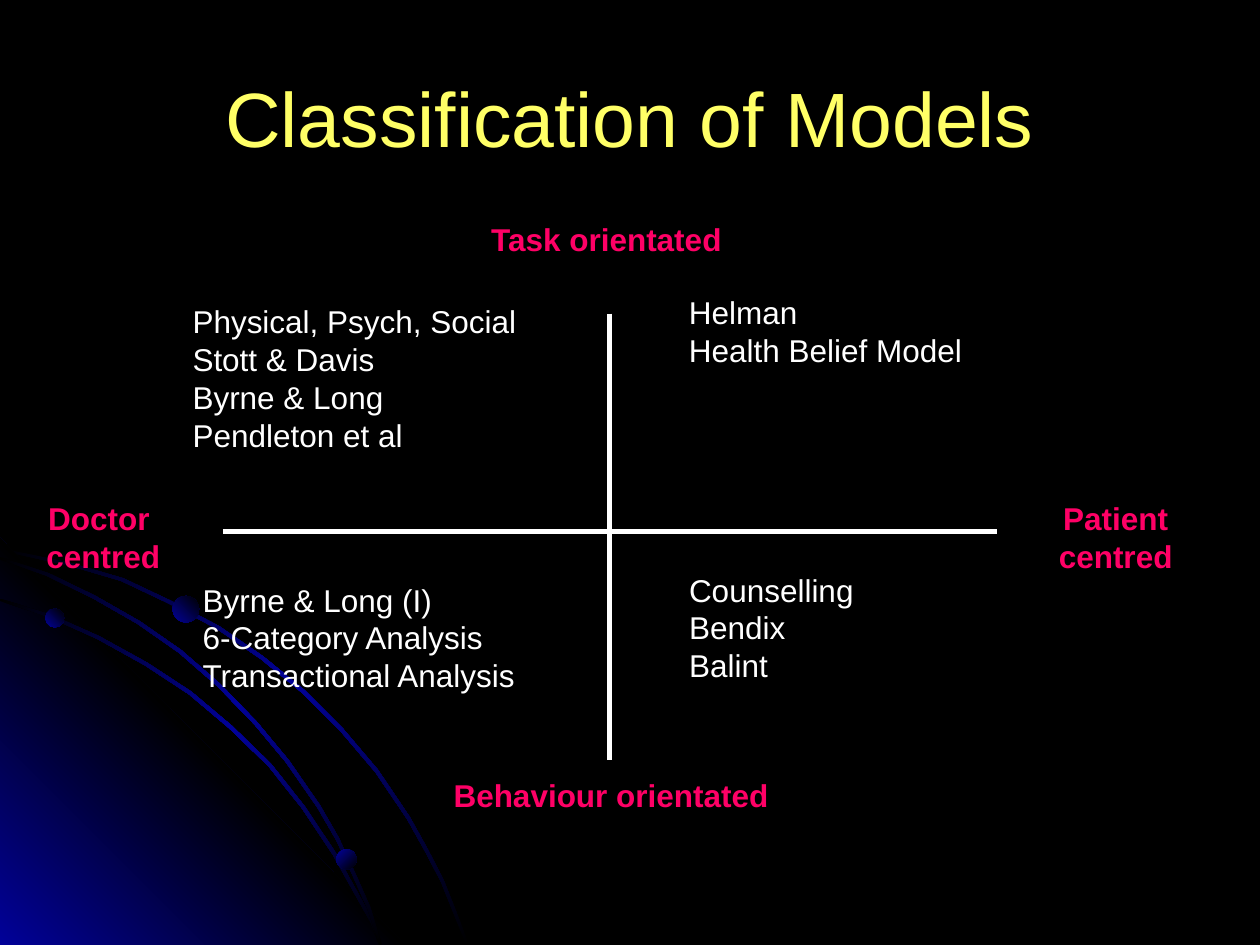
from copy import deepcopy
from pptx import Presentation
from pptx.util import Inches, Pt
from pptx.dml.color import RGBColor as RGB
from pptx.enum.shapes import MSO_SHAPE as SHAPE, MSO_CONNECTOR as LINK
from pptx.enum.text import PP_ALIGN as ALIGN, MSO_ANCHOR as ANCHOR
from pptx.oxml.ns import qn
from pptx.oxml.xmlchemy import OxmlElement as Element

COLORS = {"black": "000000", "blue": "010199", "title": "FFFF66",
          "pink": "FF0066", "white": "FFFFFF"}
WIDTH, HEIGHT = 10, 7.5

deck = Presentation()
deck.slide_width, deck.slide_height = Inches(WIDTH), Inches(HEIGHT)
slide = deck.slides.add_slide(deck.slide_layouts[6])
back = slide.background.fill
back.solid()
back.fore_color.rgb = RGB.from_string(COLORS["black"])
shapes = slide.shapes


def shade(shape, names, angle):
    """Fill with evenly spaced gradient stops, angle counter-clockwise."""
    shape.shadow.inherit = False
    shape.line.fill.background()
    fill = shape.fill
    fill.gradient()
    fill.gradient_angle = angle
    stops = shape.element.spPr.find(".//" + qn("a:gsLst"))
    while len(stops) < len(names):
        stops.append(deepcopy(stops[0]))
    for i, (stop, name) in enumerate(zip(fill.gradient_stops, names)):
        stop.position = i / (len(names) - 1)
        stop.color.rgb = RGB.from_string(COLORS[name])


def write(box, lines, color, size=18, bold=False, align=ALIGN.LEFT, wrap=False):
    """Add a text box with one paragraph per line."""
    frame = shapes.add_textbox(*map(Inches, box)).text_frame
    frame.word_wrap = wrap
    frame.text = "\n".join(lines)
    for para in frame.paragraphs:
        para.alignment = align
        font = para.font
        font.name, font.size, font.bold = "Arial", Pt(size), bold
        font.color.rgb = RGB.from_string(COLORS[color])
    return frame


# Corner decoration: glowing wedge and three thin arcs, given by outer edge
wedge = [(0, 4.27), (3.22, 7.5), (0, 7.5)]
arcs = [
    [(0, 4.35), (0.57, 4.47), (0.98, 4.59), (1.36, 4.77), (1.74, 4.97),
     (2.09, 5.21), (2.42, 5.48), (2.72, 5.78), (3, 6.11), (3.25, 6.48),
     (3.39, 6.73), (3.52, 6.98), (3.62, 7.23), (3.72, 7.49)],
    [(0, 4.75), (0.41, 4.88), (0.79, 5.05), (1.17, 5.26), (1.52, 5.49),
     (1.84, 5.76), (2.15, 6.06), (2.42, 6.4), (2.66, 6.76), (2.86, 7.12),
     (2.96, 7.3), (3.03, 7.49)],
    [(0, 4.42), (0.39, 4.55), (0.76, 4.73), (1.11, 4.93), (1.44, 5.16),
     (1.75, 5.43), (2.04, 5.73), (2.29, 6.03), (2.54, 6.39), (2.69, 6.65),
     (2.82, 6.93), (2.94, 7.2), (3.03, 7.49)],
]
glow = ("black", "blue", "black")
forms = [(wedge, ("blue", "black", "blue"), 45)]
for arc in arcs:
    inner = [(max(x - 0.02, 0), min(y + 0.02, HEIGHT)) for x, y in arc]
    forms.append((arc + inner[::-1], glow, 315))
forms[0], forms[1] = forms[1], forms[0]  # the first arc lies behind the wedge
for points, names, angle in forms:
    spots = [(Inches(x), Inches(y)) for x, y in points]
    pen = shapes.build_freeform(*spots[0])
    pen.add_line_segments(spots[1:], close=True)
    shade(pen.convert_to_shape(), names, angle)

# Beads on the arcs
for x, y, size, angle in [(0.36, 4.83, 0.15, 45), (2.67, 6.74, 0.16, 315),
                          (1.37, 4.73, 0.21, 45)]:
    bead = shapes.add_shape(SHAPE.OVAL, *map(Inches, (x, y, size, size)))
    shade(bead, ("blue", "black"), angle)

# Title
title = write((0.5, 0.3, 9, 1.25), ["Classification of Models"], "title",
              size=44, align=ALIGN.CENTER, wrap=True)
title.vertical_anchor = ANCHOR.MIDDLE

# Axes
for ends in [(4.84, 2.49, 4.84, 6.03), (1.77, 4.22, 7.91, 4.22)]:
    axis = shapes.add_connector(LINK.STRAIGHT, *map(Inches, ends))
    axis.line.color.rgb = RGB.from_string(COLORS["white"])
    axis.line.width = Pt(3)
    axis.element.spPr.append(Element("a:effectLst"))

# Axis labels
for box, lines, align, wrap in [
    ((7.99, 3.91, 1.73, 0.7), ["Patient centred"], ALIGN.CENTER, True),
    ((0.27, 3.91, 1.1, 0.7), ["Doctor ", "centred"], ALIGN.CENTER, False),
    ((3.5, 6.11, 2.7, 0.4), ["Behaviour orientated"], ALIGN.CENTER, False),
    ((3.8, 1.7, 2.05, 0.4), ["Task orientated"], ALIGN.LEFT, True),
]:
    write(box, lines, "pink", bold=True, align=align, wrap=wrap)

# Models in each quadrant
for box, lines in [
    ((1.43, 2.35, 2.77, 1.3), ["Physical, Psych, Social", "Stott & Davis",
                               "Byrne & Long", "Pendleton et al"]),
    ((5.37, 2.28, 2.37, 0.7), ["Helman", "Health Belief Model"]),
    ((1.51, 4.56, 2.7, 1), ["Byrne & Long (I)", "6-Category Analysis",
                            "Transactional Analysis"]),
    ((5.37, 4.48, 1.51, 1), ["Counselling", "Bendix", "Balint"]),
]:
    write(box, lines, "white")

deck.save("out.pptx")
